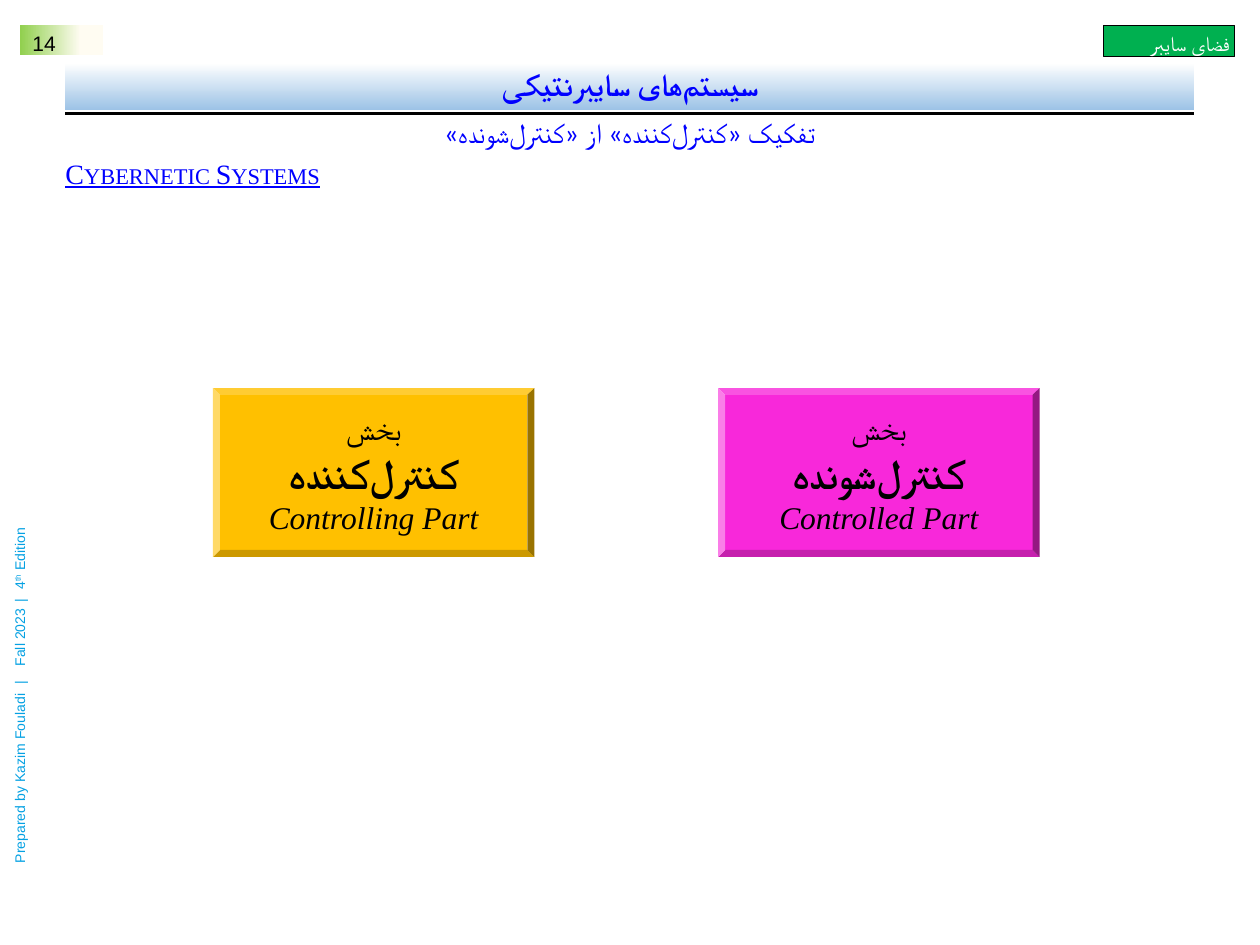
import pptx
import pptx.dml.color
import pptx.enum.shapes
import pptx.enum.text
import pptx.oxml
import pptx.oxml.ns
import pptx.util
from pptx.util import Inches

ALIGN = pptx.enum.text.PP_ALIGN
ANCHOR = pptx.enum.text.MSO_ANCHOR
SHAPE = pptx.enum.shapes.MSO_SHAPE
BLUE = "0000FF"
BLACK = "000000"
SKY = "04A1E3"
ZWNJ = chr(0x200C)
CONTROLLING = f"کنترل{ZWNJ}کننده"
CONTROLLED = f"کنترل{ZWNJ}شونده"


def rgb(value):
    """Return the colour for a hex string."""
    return pptx.dml.color.RGBColor.from_string(value)


def add_child(parent, tag):
    """Append an empty DrawingML element and return it."""
    child = pptx.oxml.parse_xml(f"<{tag} {pptx.oxml.ns.nsdecls('a')}/>")
    parent.append(child)
    return child


def add_box(s, box, kind=SHAPE.RECTANGLE, fill=None):
    """Add a borderless preset shape, solid if a fill is given."""
    sp = s.shapes.add_shape(kind, *map(Inches, box))
    sp.shadow.inherit = False
    sp.line.fill.background()
    if fill:
        sp.fill.solid()
        sp.fill.fore_color.rgb = rgb(fill)
    return sp


def add_text_box(s, box):
    """Add a text box that wraps."""
    sp = s.shapes.add_textbox(*map(Inches, box))
    sp.text_frame.word_wrap = True
    return sp


def set_gradient(sp, angle, stops):
    """Fill a shape with a two-stop linear gradient."""
    sp.fill.gradient()
    sp.fill.gradient_angle = angle
    for stop, (position, color) in zip(sp.fill.gradient_stops, stops):
        stop.position = position
        stop.color.rgb = rgb(color)


def set_frame(sp, insets, anchor=ANCHOR.TOP):
    """Set the insets (left, top, right, bottom) and anchor; return the frame."""
    tf = sp.text_frame
    tf.margin_left, tf.margin_top, tf.margin_right, tf.margin_bottom = map(Inches, insets)
    tf.vertical_anchor = anchor
    return tf


def style_run(r, size, font, color, bold=False, italic=False):
    """Format a run for both Latin and Persian text."""
    r.font.size = pptx.util.Pt(size)
    r.font.name = font
    r.font.bold = bold
    r.font.italic = italic
    r.font.color.rgb = rgb(color)
    add_child(r.font._element, "a:cs").set("typeface", font)


def write(p, text, size, font, color, align=ALIGN.LEFT, rtl=False, spacing=None, **style):
    """Write a one-run paragraph and return the run."""
    p.text = text
    p.alignment = align
    if spacing:
        p.line_spacing = spacing
    if rtl:
        p._p.get_or_add_pPr().set("rtl", "1")
    r = p.runs[0]
    style_run(r, size, font, color, **style)
    return r


def add_page_number(s, box):
    """Place the page number on its fading green tab."""
    sp = add_box(s, box)
    set_gradient(sp, 180, [(0.27, "FFFCF2"), (0.99, "92D050")])
    tf = set_frame(sp, (0.1, 0.04, 0.1, 0))
    write(tf.paragraphs[0], "14", 12, "Arial", BLACK)


def add_course_tag(s, box):
    """Place the green course tag."""
    sp = add_box(s, box, fill="00B050")
    sp.line.color.rgb = rgb(BLACK)
    sp.line.width = pptx.util.Pt(0.5)
    tf = set_frame(sp, (0.04, 0.08, 0.04, 0.05), ANCHOR.MIDDLE)
    write(tf.paragraphs[0], "فضای سایبر", 12, "Roboto", "FFFFFF", ALIGN.RIGHT)


def add_credit(s, box):
    """Place the credit that reads upwards along the left edge."""
    sp = add_text_box(s, box)
    sp.rotation = 270
    p = sp.text_frame.paragraphs[0]
    parts = [("Prepared by Kazim Fouladi", {}), (" | ", {"spc": "300"}),
             ("Fall 2023", {}), (" | ", {"spc": "150"}),
             ("4", {}), ("th", {"baseline": "30000"}), (" Edition", {})]
    for text, attributes in parts:
        r = p.add_run()
        r.text = text
        style_run(r, 8, "Arial", SKY)
        for name, value in attributes.items():
            r.font._element.set(name, value)


def add_header(s, left, top, width):
    """Place the title band, its rule, the subtitle and the English heading."""
    band = add_box(s, (left, top, width, 0.37))
    set_gradient(band, 270, [(0, "FFFFFF"), (1, "9DC3E6")])
    tf = set_frame(band, (0.1, 0.05, 0.1, 0.05), ANCHOR.MIDDLE)
    write(tf.paragraphs[0], f"سیستم{ZWNJ}های سایبرنتیکی", 18, "Calibri", BLUE,
          ALIGN.CENTER, rtl=True, spacing=0.9, bold=True)

    ends = (left, top + 0.4, left + width, top + 0.4)
    rule = s.shapes.add_connector(pptx.enum.shapes.MSO_CONNECTOR.STRAIGHT, *map(Inches, ends))
    rule.line.color.rgb = rgb(BLACK)
    rule.line.width = pptx.util.Pt(1.5)
    add_child(rule._element.spPr, "a:effectLst")

    subtitle = add_text_box(s, (left, top + 0.43, width, 0.29))
    tf = set_frame(subtitle, (0.1, 0.02, 0.1, 0.05))
    write(tf.paragraphs[0], f"تفکیک «{CONTROLLING}» از «{CONTROLLED}»", 16, "Calibri", BLUE,
          ALIGN.CENTER, rtl=True, spacing=0.9)

    heading = add_text_box(s, (left, top + 0.72, width, 0.22))
    tf = set_frame(heading, (0, 0.05, 0.1, 0.05))
    r = write(tf.paragraphs[0], "Cybernetic Systems", 16, "Times New Roman", BLUE, spacing=0.9)
    r.font.underline = True
    r.font._element.set("cap", "small")


def add_part(s, box, fill, persian, english):
    """Place a bevelled block that names one part of the system."""
    sp = add_box(s, box, SHAPE.BEVEL, fill)
    sp.adjustments[0] = 0.041
    tf = set_frame(sp, (0.04, 0.04, 0.04, 0.04), ANCHOR.MIDDLE)
    lines = [("بخش", 18, "Calibri", {}),
             (persian, 24, "Calibri", {"bold": True}),
             (english, 18, "Times New Roman", {"italic": True})]
    for i, (text, size, font, style) in enumerate(lines):
        p = tf.add_paragraph() if i else tf.paragraphs[0]
        write(p, text, size, font, BLACK, ALIGN.CENTER, rtl=True, **style)


def main():
    """Build the slide and save it."""
    prs = pptx.Presentation()
    prs.slide_width, prs.slide_height = Inches(10), Inches(7.5)
    s = prs.slides.add_slide(prs.slide_layouts[6])
    add_page_number(s, (0.16, 0.2, 0.66, 0.24))
    add_course_tag(s, (8.76, 0.2, 1.04, 0.25))
    add_credit(s, (-1.32, 5.35, 2.96, 0.24))
    add_header(s, 0.52, 0.5, 8.96)
    parts = [(1.69, "FFC000", CONTROLLING, "Controlling Part"),
             (5.7, "F828DA", CONTROLLED, "Controlled Part")]
    for left, fill, persian, english in parts:
        add_part(s, (left, 3.08, 2.55, 1.34), fill, persian, english)
    prs.save("out.pptx")


if __name__ == "__main__":
    main()
